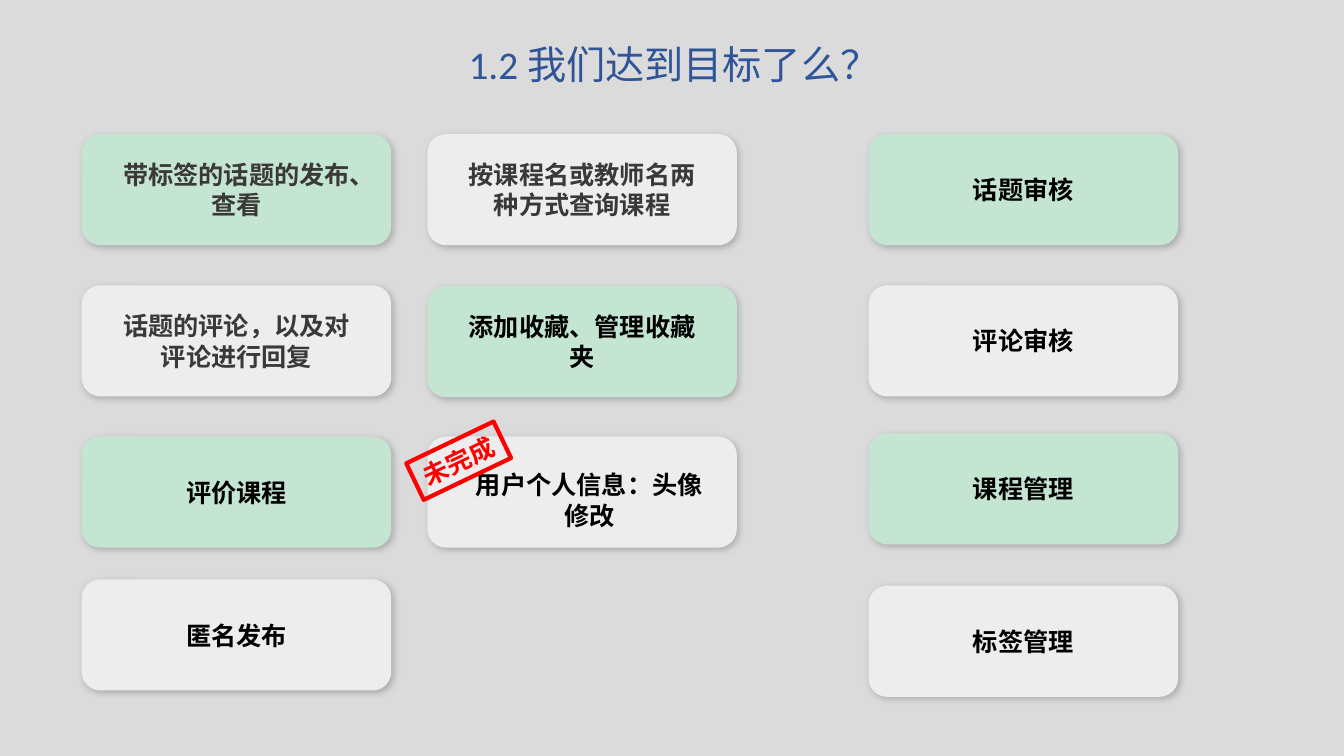
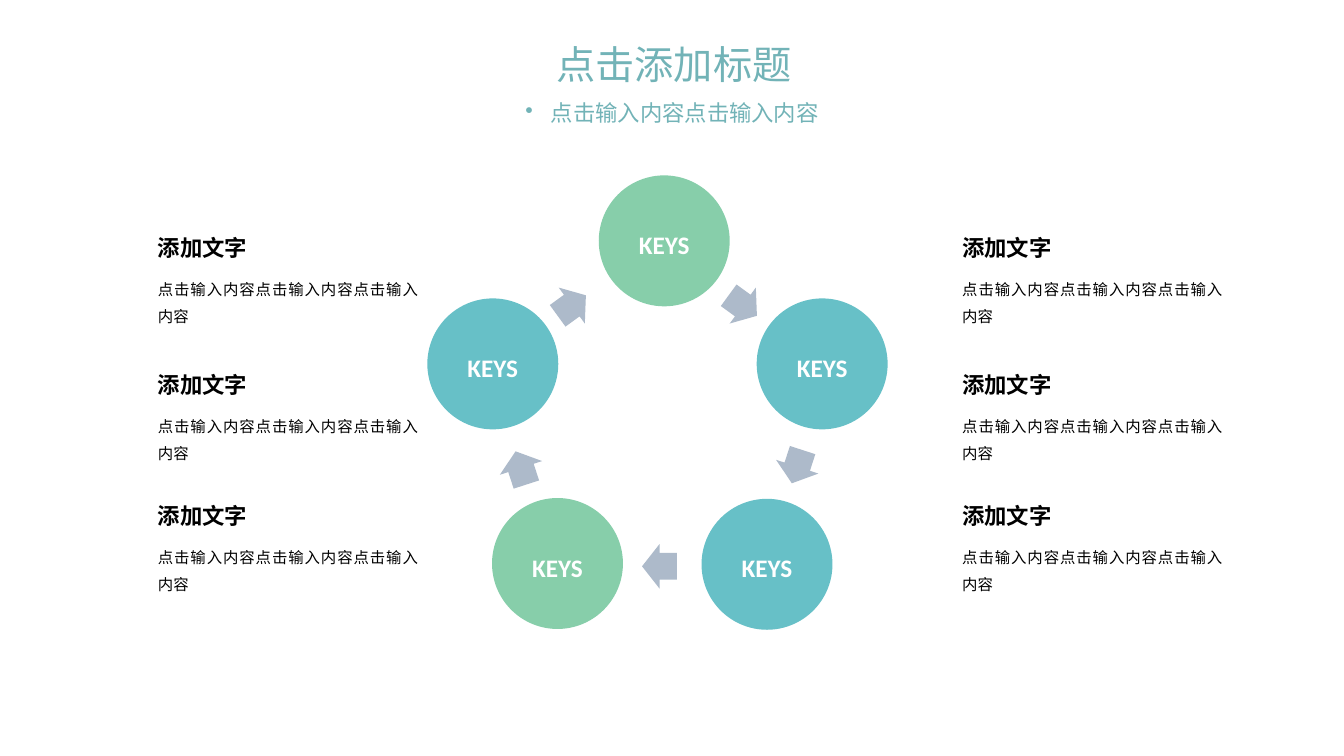
import pptx
import pptx.dml.color
import pptx.enum.shapes
import pptx.enum.text
import pptx.oxml
import pptx.oxml.ns
import pptx.util
from pptx.util import Cm

COLORS = {
    "gray_background": "DBDBDB", "white": "FFFFFF", "black": "000000",
    "mint": "C5E5D3", "light_gray": "EDEDED", "dark_gray": "3B3838",
    "blue": "2F5597", "teal_text": "72B3B7", "red": "FF0000",
    "teal": "67C0C7", "green": "87CEAA", "arrow": "ADBACA", "shadow": "808080",
}
LATIN_FONT = "Calibri"
CARD_FONT = "Noto Sans CJK SC"
SLIDE_WIDTH, SLIDE_HEIGHT = 33.87, 19.05
CARD_WIDTH, CARD_HEIGHT = 7.8, 2.8
CIRCLE_SIZE = 3.3
ARROW_LENGTH, ARROW_WIDTH = 0.88, 1.12

SHAPES = pptx.enum.shapes.MSO_SHAPE
ALIGN = pptx.enum.text.PP_ALIGN
ANCHOR = pptx.enum.text.MSO_ANCHOR

NARROW, WIDE = (0.9, 0.9), (0.6, 0.6)
# Each column: left, then cards of (top, text, fill, text color, side insets, top inset)
CARD_COLUMNS = [
    (2.06, [
        (3.38, "带标签的话题的发布、查看", "mint", "dark_gray", NARROW, 0),
        (7.19, "话题的评论，以及对评论进行回复", "light_gray", "dark_gray", NARROW, 0),
        (11, "评价课程", "mint", "black", NARROW, 0),
        (14.6, "匿名发布", "light_gray", "black", NARROW, 0),
    ]),
    (10.77, [
        (3.38, "按课程名或教师名两种方式查询课程", "light_gray", "dark_gray", WIDE, 0),
        (7.21, "添加收藏、管理收藏夹", "mint", "black", WIDE, 0),
        (11, "用户个人信息：头像修改", "light_gray", "black", (1.08, 0.72), 0.4),
    ]),
    (21.89, [
        (3.38, "话题审核", "mint", "black", NARROW, 0),
        (7.19, "评论审核", "light_gray", "black", WIDE, 0),
        (10.92, "课程管理", "mint", "black", NARROW, 0),
        (14.76, "标签管理", "light_gray", "black", WIDE, 0),
    ]),
]

# Centers relative to the cycle's box, clockwise from the top
CYCLE_CIRCLES = [
    (5.97, 1.65, "green"), (9.95, 4.75, "teal"), (8.56, 9.8, "teal"),
    (3.28, 9.78, "green"), (1.65, 4.75, "teal"),
]
CYCLE_ARROWS = [(7.95, 3.28), (9.32, 7.34), (5.85, 9.85), (2.36, 7.37), (3.64, 3.28)]


def rgb(color):
    return pptx.dml.color.RGBColor.from_string(COLORS[color])


def add_slide(presentation, background):
    slide = presentation.slides.add_slide(presentation.slide_layouts[6])
    slide.background.fill.solid()
    slide.background.fill.fore_color.rgb = rgb(background)
    return slide


def style_paragraph(paragraph, text, size, color, font=LATIN_FONT, bold=False,
                    align=ALIGN.CENTER):
    paragraph.text = text
    paragraph.alignment = align
    paragraph.font.name = font
    paragraph.font.size = pptx.util.Pt(size)
    paragraph.font.bold = bold
    paragraph.font.color.rgb = rgb(color)


def add_shape(slide, kind, left, top, width, height, fill=None):
    shape = slide.shapes.add_shape(kind, Cm(left), Cm(top), Cm(width), Cm(height))
    shape.shadow.inherit = False
    if fill:
        shape.fill.solid()
        shape.fill.fore_color.rgb = rgb(fill)
    else:
        shape.fill.background()
    shape.line.fill.background()
    return shape


def add_text_box(slide, left, top, width, height, anchor=ANCHOR.TOP):
    frame = slide.shapes.add_textbox(Cm(left), Cm(top), Cm(width), Cm(height)).text_frame
    frame.word_wrap = True
    frame.vertical_anchor = anchor
    return frame


def add_title(slide, text, color):
    width = 14
    frame = add_text_box(slide, (SLIDE_WIDTH - width) / 2 + 0.05, 1.02, width, 1.32,
                         ANCHOR.MIDDLE)
    paragraph = frame.paragraphs[0]
    style_paragraph(paragraph, text, 28, color)
    paragraph.line_spacing = 0.9


def add_subtitle(slide, text):
    frame = add_text_box(slide, 9.32, 2.51, 15.24, 0.74, ANCHOR.MIDDLE)
    paragraph = frame.paragraphs[0]
    properties = paragraph._p.get_or_add_pPr()
    properties.set("marL", str(Cm(0.64)))
    properties.set("indent", str(-Cm(0.64)))
    bullet = pptx.oxml.parse_xml(
        f'<a:buChar {pptx.oxml.ns.nsdecls("a")} char="•"/>')
    properties.append(bullet)
    style_paragraph(paragraph, text, 16, "teal_text")
    paragraph.line_spacing = 0.9


def add_soft_shadow(shape):
    effects = shape._element.spPr.find(pptx.oxml.ns.qn("a:effectLst"))
    effects.append(pptx.oxml.parse_xml(
        f'<a:outerShdw {pptx.oxml.ns.nsdecls("a")} blurRad="{pptx.util.Pt(5)}" '
        f'dist="{pptx.util.Pt(2)}" dir="2700000" algn="tl" rotWithShape="0">'
        f'<a:srgbClr val="{COLORS["shadow"]}"><a:alpha val="50000"/></a:srgbClr>'
        '</a:outerShdw>'))


def add_card(slide, left, top, text, fill, color, side_insets, top_inset):
    card = add_shape(slide, SHAPES.ROUNDED_RECTANGLE, left, top,
                     CARD_WIDTH, CARD_HEIGHT, fill)
    add_soft_shadow(card)
    frame = card.text_frame
    frame.word_wrap = True
    frame.vertical_anchor = ANCHOR.MIDDLE
    frame.margin_left, frame.margin_right = map(Cm, side_insets)
    frame.margin_top, frame.margin_bottom = Cm(top_inset), 0
    style_paragraph(frame.paragraphs[0], text, 18, color, CARD_FONT, bold=True)


def add_stamp(slide, left, top, text):
    stamp = add_shape(slide, SHAPES.RECTANGLE, left, top, 2.44, 1.02)
    stamp.line.color.rgb = rgb("red")
    stamp.line.width = pptx.util.Pt(3)
    stamp.rotation = 334.4
    stamp.text_frame.word_wrap = False
    style_paragraph(stamp.text_frame.paragraphs[0], text, 18, "red", CARD_FONT, bold=True)


def add_cycle(slide, left, top):
    """Five labelled circles with arrows turning clockwise between them."""
    for center_x, center_y, fill in CYCLE_CIRCLES:
        circle = add_shape(slide, SHAPES.OVAL, left + center_x - CIRCLE_SIZE / 2,
                           top + center_y - CIRCLE_SIZE / 2,
                           CIRCLE_SIZE, CIRCLE_SIZE, fill)
        frame = circle.text_frame
        frame.margin_top = Cm(0.3)
        frame.vertical_anchor = ANCHOR.MIDDLE
        style_paragraph(frame.paragraphs[0], "KEYS", 18, "white", bold=True)
    for index, (center_x, center_y) in enumerate(CYCLE_ARROWS):
        arrow = add_shape(slide, SHAPES.RIGHT_ARROW, left + center_x - ARROW_LENGTH / 2,
                          top + center_y - ARROW_WIDTH / 2,
                          ARROW_LENGTH, ARROW_WIDTH, "arrow")
        arrow.adjustments[0], arrow.adjustments[1] = 0.6, 0.5
        arrow.rotation = 36 + 72 * index


def add_text_block(slide, left, top):
    frame = add_text_box(slide, left, top, 7.06, 2.54)
    heading, body = frame.paragraphs[0], frame.add_paragraph()
    style_paragraph(heading, "添加文字", 16, "black", bold=True, align=ALIGN.LEFT)
    style_paragraph(body, "点击输入内容点击输入内容点击输入内容", 11, "black",
                    align=ALIGN.JUSTIFY)
    body.line_spacing = 1.5
    body.space_before = pptx.util.Pt(7)


def build_goals_slide(presentation):
    slide = add_slide(presentation, "gray_background")
    add_title(slide, "1.2 我们达到目标了么？", "blue")
    for left, cards in CARD_COLUMNS:
        for card in cards:
            add_card(slide, left, *card)
    add_stamp(slide, 10.34, 11.1, "未完成")


def build_cycle_slide(presentation):
    slide = add_slide(presentation, "white")
    add_title(slide, "点击添加标题", "teal_text")
    add_subtitle(slide, "点击输入内容点击输入内容")
    add_cycle(slide, 10.77, 4.42)
    for left in (3.73, 24):
        for top in (5.77, 9.22, 12.52):
            add_text_block(slide, left, top)


def main():
    presentation = pptx.Presentation()
    presentation.slide_width = Cm(SLIDE_WIDTH)
    presentation.slide_height = Cm(SLIDE_HEIGHT)
    build_goals_slide(presentation)
    build_cycle_slide(presentation)
    presentation.save("out.pptx")


if __name__ == "__main__":
    main()
